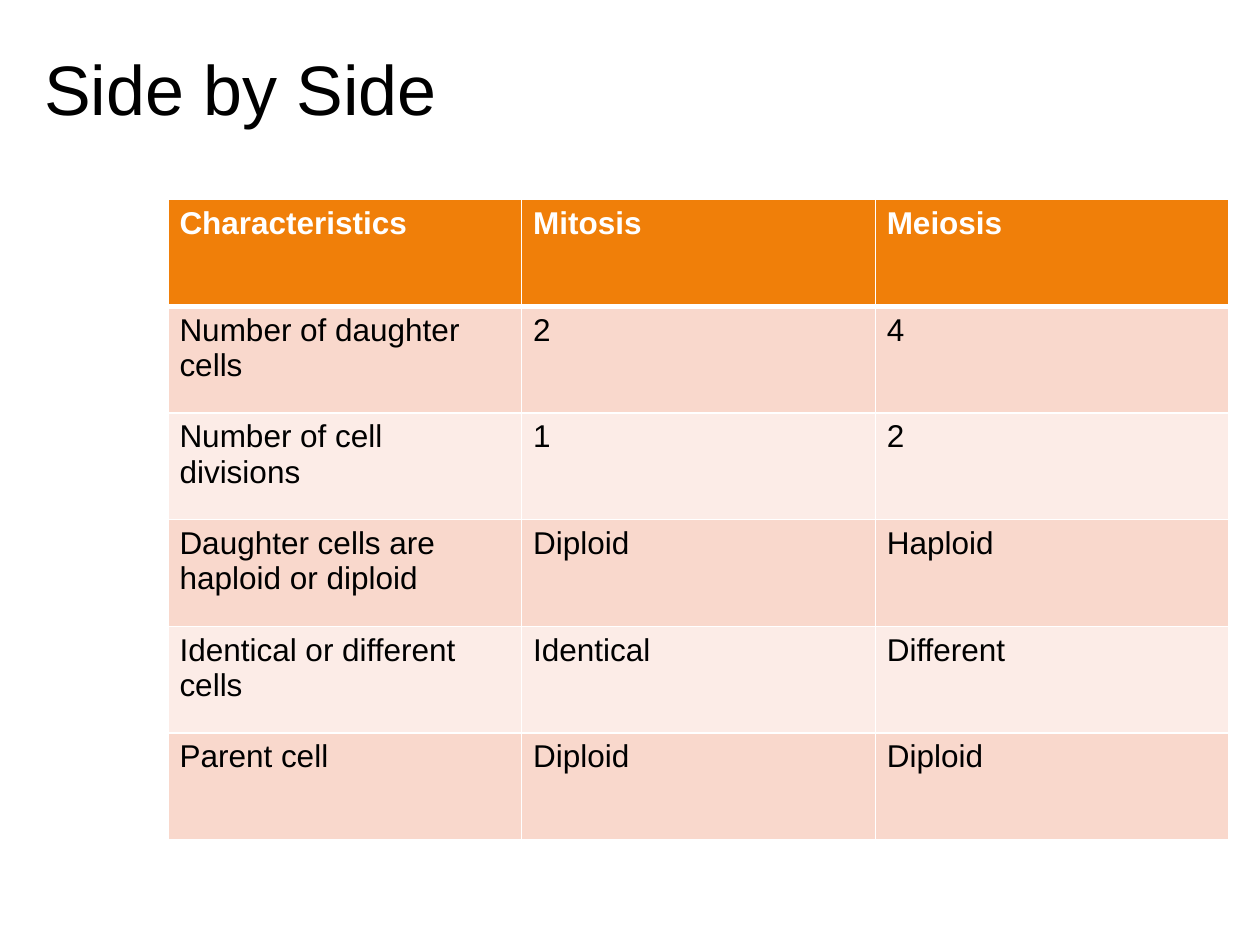
import pptx
import pptx.util
import pptx.dml.color
import pptx.enum.text
import pptx.oxml.ns
from lxml import etree

Pt = pptx.util.Pt

# Content
TITLE = "Side by Side"
HEADINGS = ("Characteristics", "Mitosis", "Meiosis")
COMPARISONS = [
    ("Number of daughter cells", "2", "4"),
    ("Number of cell divisions", "1", "2"),
    ("Daughter cells are haploid or diploid", "Diploid", "Haploid"),
    ("Identical or different cells", "Identical", "Different"),
    ("Parent cell", "Diploid", "Diploid"),
]

# Style
FONT = "Arial"
BLACK, WHITE, ORANGE = "000000", "FFFFFF", "F07F09"
BANDS = ("F9D8CC", "FCECE7")
TABLE_LEFT, TABLE_TOP = 96, 114
COLUMN_WIDTH, ROW_HEIGHT = 202.1, 61
RULE, HEADER_RULE = 1, 3


def colour(hex_code):
    return pptx.dml.color.RGBColor.from_string(hex_code)


def format_text(frame, size, hex_code, bold=False):
    for paragraph in frame.paragraphs:
        for run in paragraph.runs:
            run.font.name = FONT
            run.font.size = Pt(size)
            run.font.bold = bold
            run.font.color.rgb = colour(hex_code)


def add_borders(cell, top, bottom):
    """Draw white borders; the line elements must precede the cell fill."""
    properties = cell._tc.get_or_add_tcPr()
    widths = {"a:lnL": RULE, "a:lnR": RULE, "a:lnT": top, "a:lnB": bottom}
    for position, (side, width) in enumerate(widths.items()):
        border = etree.Element(pptx.oxml.ns.qn(side), w=str(Pt(width)))
        fill = etree.SubElement(border, pptx.oxml.ns.qn("a:solidFill"))
        etree.SubElement(fill, pptx.oxml.ns.qn("a:srgbClr"), val=WHITE)
        properties.insert(position, border)


# Slide
deck = pptx.Presentation()
deck.slide_width, deck.slide_height = Pt(720), Pt(540)
slide = deck.slides.add_slide(deck.slide_layouts[5])

# Title
title = slide.shapes.title
title.left, title.top, title.width, title.height = Pt(18), Pt(13), Pt(645), Pt(74)
title.text_frame.text = TITLE
title.text_frame.vertical_anchor = pptx.enum.text.MSO_ANCHOR.MIDDLE
title.text_frame.paragraphs[0].alignment = pptx.enum.text.PP_ALIGN.LEFT
format_text(title.text_frame, 40, BLACK)

# Comparison table
rows = [HEADINGS] + COMPARISONS
comparison = slide.shapes.add_table(
    len(rows), len(HEADINGS), Pt(TABLE_LEFT), Pt(TABLE_TOP),
    Pt(COLUMN_WIDTH * len(HEADINGS)), Pt(ROW_HEIGHT * len(rows))).table
for column in comparison.columns:
    column.width = Pt(COLUMN_WIDTH)

for row_index, row in enumerate(rows):
    comparison.rows[row_index].height = Pt(ROW_HEIGHT)
    is_header = row_index == 0
    background = ORANGE if is_header else BANDS[(row_index - 1) % 2]
    for column_index, text in enumerate(row):
        cell = comparison.cell(row_index, column_index)
        cell.text_frame.text = text
        cell.margin_left = cell.margin_right = Pt(6.6)
        cell.margin_top = cell.margin_bottom = Pt(3.6)
        cell.fill.solid()
        cell.fill.fore_color.rgb = colour(background)
        format_text(cell.text_frame, 18, WHITE if is_header else BLACK, is_header)
        add_borders(cell, top=HEADER_RULE if row_index == 1 else RULE,
                    bottom=HEADER_RULE if is_header else RULE)

deck.save("out.pptx")
